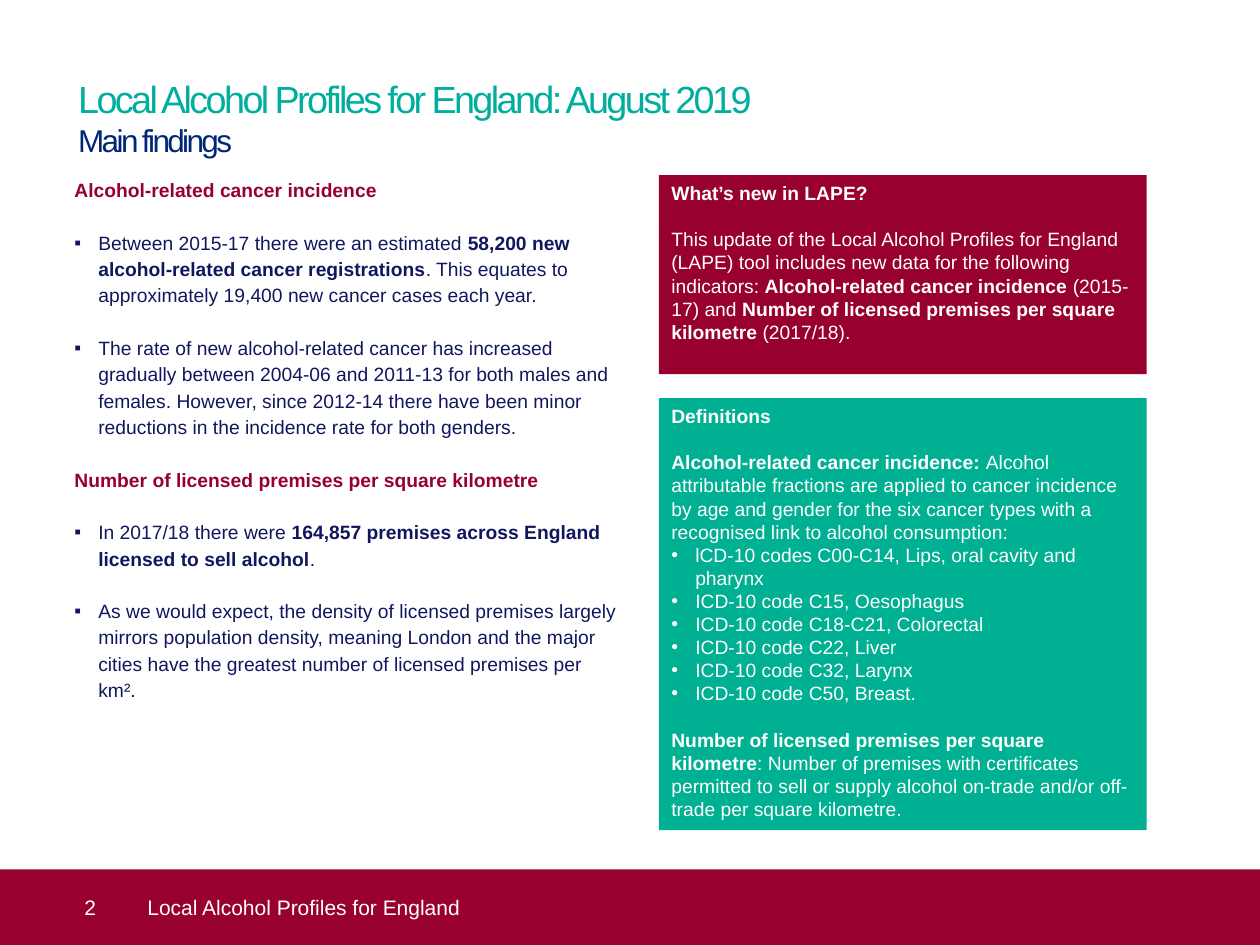
from dataclasses import dataclass
from lxml.etree import SubElement
from pptx import Presentation
from pptx.dml.color import RGBColor
from pptx.enum.shapes import MSO_SHAPE
from pptx.enum.text import MSO_ANCHOR, PP_ALIGN
from pptx.oxml.ns import qn
from pptx.util import Inches, Pt


@dataclass(frozen=True)
class Theme:
    font: str = "Arial"
    teal: str = "00AE9E"
    blue: str = "002776"
    navy: str = "11175E"
    red: str = "98002E"
    green: str = "00B092"
    white: str = "FFFFFF"
    title: float = 21.6
    subtitle: float = 18
    body: float = 11
    footer: float = 12
    indent: float = 0.19
    body_gap: float = 15
    panel_gap: float = 13.2


T = Theme()
WIDTH, HEIGHT = Inches(10), Inches(7.5)
COLS, ROWS = 100, 75

FINDINGS = [
    ("Alcohol-related cancer incidence", [
        "Between 2015-17 there were an estimated **58,200 new alcohol-related "
        "cancer registrations**. This equates to approximately 19,400 new "
        "cancer cases each year.",
        "The rate of new alcohol-related cancer has increased gradually between "
        "2004-06 and 2011-13 for both males and females. However, since 2012-14 "
        "there have been minor reductions in the incidence rate for both genders.",
    ]),
    ("Number of licensed premises per square kilometre", [
        "In 2017/18 there were **164,857 premises across England licensed to "
        "sell alcohol**.",
        "As we would expect, the density of licensed premises largely mirrors "
        "population density, meaning London and the major cities have the "
        "greatest number of licensed premises per km².",
    ]),
]

NEWS = (
    "This update of the Local Alcohol Profiles for England (LAPE) tool includes "
    "new data for the following indicators: **Alcohol-related cancer incidence** "
    "(2015-17) and **Number of licensed premises per square kilometre** (2017/18)."
)
CANCER = (
    "**Alcohol-related cancer incidence: **Alcohol attributable fractions are "
    "applied to cancer incidence by age and gender for the six cancer types with "
    "a recognised link to alcohol consumption:"
)
CODES = [
    "lCD-10 codes C00-C14, Lips, oral cavity and pharynx",
    "ICD-10 code C15, Oesophagus",
    "ICD-10 code C18-C21, Colorectal",
    "ICD-10 code C22, Liver",
    "ICD-10 code C32, Larynx",
    "ICD-10 code C50, Breast.",
]
PREMISES = (
    "**Number of licensed premises per square kilometre**: Number of premises "
    "with certificates permitted to sell or supply alcohol on-trade and/or "
    "off-trade per square kilometre."
)


def place(box):
    col, row, cols, rows = box
    return [int(v) for v in (WIDTH * col / COLS, HEIGHT * row / ROWS,
                             WIDTH * cols / COLS, HEIGHT * rows / ROWS)]


def frame(sp, margins, anchor):
    tf = sp.text_frame
    tf.word_wrap = True
    tf.vertical_anchor = anchor
    tf.margin_left, tf.margin_top, tf.margin_right, tf.margin_bottom = map(Inches, margins)
    return tf


def add_text_area(s, box, margins=(0, 0, 0, 0), anchor=MSO_ANCHOR.TOP):
    return frame(s.shapes.add_textbox(*place(box)), margins, anchor)


def add_block(s, box, fill, margins=(0.1, 0.05, 0.1, 0.05), anchor=MSO_ANCHOR.TOP):
    sp = s.shapes.add_shape(MSO_SHAPE.RECTANGLE, *place(box))
    sp.shadow.inherit = False
    sp.fill.solid()
    sp.fill.fore_color.rgb = RGBColor.from_string(fill)
    sp.line.fill.background()
    return frame(sp, margins, anchor)


def add_text(tf, text, *, size=T.body, color=T.white, bold=False, before=0,
             leading=None, bullet=None, tracking=None):
    p = tf.paragraphs[0]
    if p.runs:
        p = tf.add_paragraph()
    if bullet:
        pPr = p._p.get_or_add_pPr()
        pPr.set("marL", str(Inches(T.indent)))
        pPr.set("indent", str(-Inches(T.indent)))
        SubElement(pPr, qn("a:buFont")).set("typeface", T.font)
        SubElement(pPr, qn("a:buChar")).set("char", bullet)
    p.alignment = PP_ALIGN.LEFT
    p.space_before = Pt(before)
    if leading:
        p.line_spacing = leading
    for i, part in enumerate(text.split("**")):
        if not part:
            continue
        r = p.add_run()
        r.text = part
        r.font.name = T.font
        r.font.size = Pt(size)
        r.font.bold = bold or i % 2 == 1
        r.font.color.rgb = RGBColor.from_string(color)
        if tracking:
            r._r.get_or_add_rPr().set("spc", str(int(tracking * 100)))


def add_title(s, box):
    tf = add_text_area(s, box)
    add_text(tf, "Local Alcohol Profiles for England: August 2019",
             size=T.title, color=T.teal, tracking=-1.5)
    add_text(tf, "Main findings", size=T.subtitle, color=T.blue, tracking=-1.5)


def add_findings(s, box):
    tf = add_text_area(s, box)
    for i, (heading, points) in enumerate(FINDINGS):
        add_text(tf, heading, color=T.red, bold=True, leading=1.14,
                 before=T.body_gap if i else 0)
        for point in points:
            add_text(tf, point, color=T.navy, bullet="▪", leading=1.14,
                     before=T.body_gap)


def add_news(s, box):
    tf = add_block(s, box, T.red)
    add_text(tf, "What’s new in LAPE?", bold=True)
    add_text(tf, NEWS, before=T.panel_gap)


def add_definitions(s, box):
    tf = add_block(s, box, T.green)
    add_text(tf, "Definitions", bold=True)
    add_text(tf, CANCER, before=T.panel_gap)
    for code in CODES:
        add_text(tf, code, bullet="•")
    add_text(tf, PREMISES, before=T.panel_gap)


def add_footer(s, box):
    col, row, cols, rows = box
    number = add_block(s, box, T.red, (0.67, 0, 0.1, 0), MSO_ANCHOR.MIDDLE)
    add_text(number, "2", size=T.footer)
    label = add_text_area(s, (col + 9.8, row, cols - 11.8, rows),
                          (T.indent, 0, 0, 0), MSO_ANCHOR.MIDDLE)
    add_text(label, "Local Alcohol Profiles for England", size=T.footer)


def main():
    prs = Presentation()
    prs.slide_width, prs.slide_height = WIDTH, HEIGHT
    s = prs.slides.add_slide(prs.slide_layouts[6])
    left, right, top, panel = 5.9, 52.3, 13.9, 38.7
    add_title(s, (6.2, 6, 87.8, 7.1))
    add_findings(s, (left, top, 43.1, 51.8))
    add_news(s, (right, top, panel, 15.8))
    add_definitions(s, (right, 31.6, panel, 34.3))
    add_footer(s, (0, 69, COLS, 6))
    prs.save("out.pptx")


if __name__ == "__main__":
    main()
